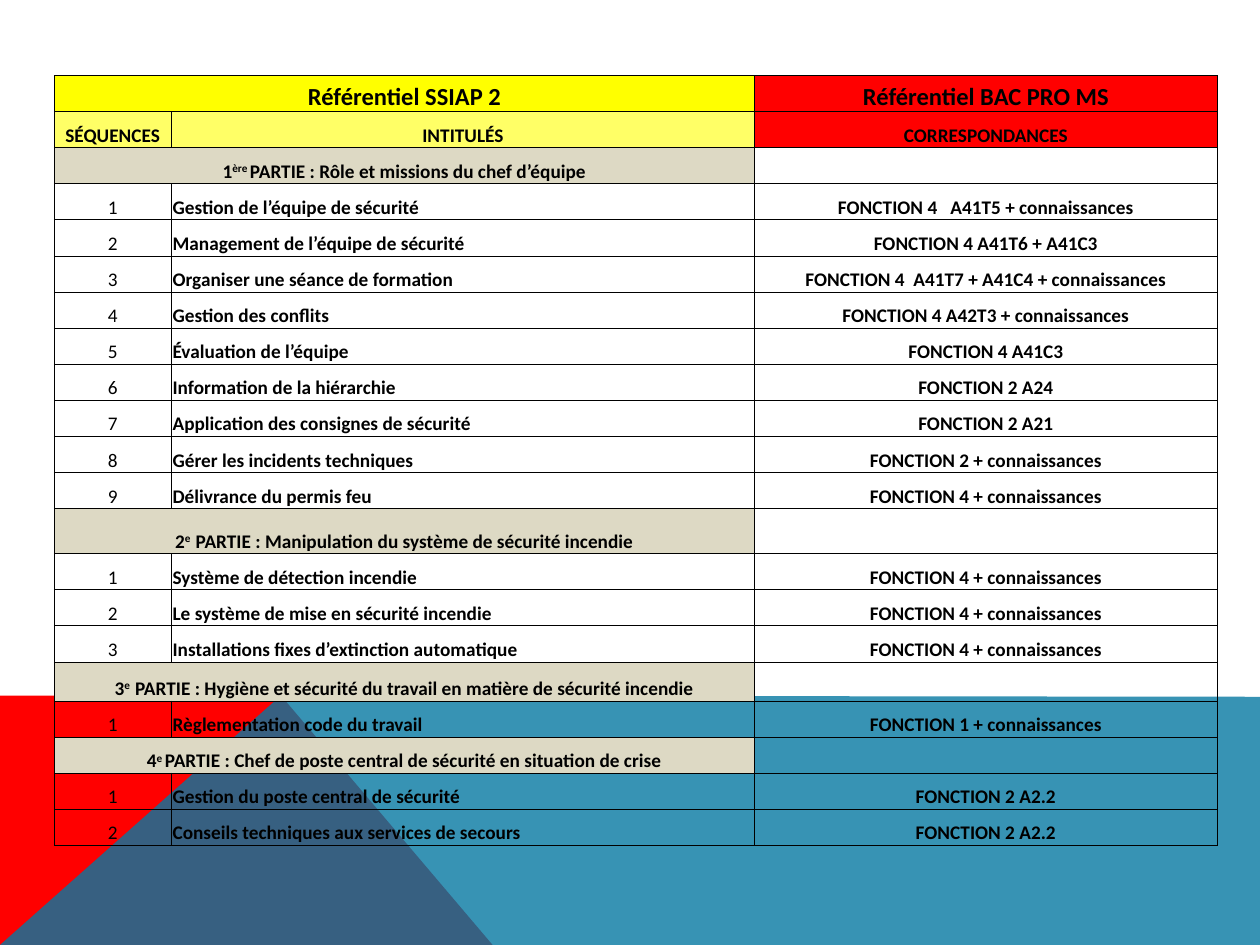
from lxml.etree import SubElement
from pptx import Presentation
from pptx.dml.color import RGBColor
from pptx.enum.text import MSO_ANCHOR, PP_ALIGN
from pptx.oxml.ns import qn
from pptx.util import Inches, Pt

BLACK = RGBColor(0x00, 0x00, 0x00)
RED = RGBColor(0xFF, 0x00, 0x00)
BLUE = RGBColor(0x05, 0x78, 0xA2)
YELLOW = RGBColor(0xFF, 0xFF, 0x00)
PALE_YELLOW = RGBColor(0xFF, 0xFF, 0x66)
BEIGE = RGBColor(0xDD, 0xD9, 0xC4)
FONT = "Calibri"

# Each part: number, ordinal ending, title, row height (None = regular), sequences
PARTS = [
    ("1", "ère ", "PARTIE : Rôle et missions du chef d’équipe", None, [
        ("Gestion de l’équipe de sécurité", "FONCTION 4   A41T5 + connaissances"),
        ("Management de l’équipe de sécurité", "FONCTION 4 A41T6 + A41C3"),
        ("Organiser une séance de formation", "FONCTION 4  A41T7 + A41C4 + connaissances"),
        ("Gestion des conflits", "FONCTION 4 A42T3 + connaissances"),
        ("Évaluation de l’équipe", "FONCTION 4 A41C3"),
        ("Information de la hiérarchie", "FONCTION 2 A24"),
        ("Application des consignes de sécurité", "FONCTION 2 A21"),
        ("Gérer les incidents techniques", "FONCTION 2 + connaissances"),
        ("Délivrance du permis feu", "FONCTION 4 + connaissances"),
    ]),
    ("2", "e  ", "PARTIE : Manipulation du système de sécurité incendie", 0.36, [
        ("Système de détection incendie", "FONCTION 4 + connaissances"),
        ("Le système de mise en sécurité incendie", "FONCTION 4 + connaissances"),
        ("Installations fixes d’extinction automatique", "FONCTION 4 + connaissances"),
    ]),
    ("3", "e  ", "PARTIE : Hygiène et sécurité du travail en matière de sécurité incendie", 0.31, [
        ("Règlementation code du travail", "FONCTION 1 + connaissances"),
    ]),
    ("4", "e ", "PARTIE : Chef de poste central de sécurité en situation de crise", None, [
        ("Gestion du poste central de sécurité", "FONCTION 2 A2.2"),
        ("Conseils techniques aux services de secours", "FONCTION 2 A2.2"),
    ]),
]


def add_text(cell, text, size=11, bold=True, align=PP_ALIGN.CENTER, raised=False):
    paragraph = cell.text_frame.paragraphs[0]
    paragraph.alignment = align
    run = paragraph.add_run()
    run.text = text
    run.font.name = FONT
    run.font.size = Pt(size)
    run.font.bold = bold
    run.font.color.rgb = BLACK
    if raised:
        run.font._element.set("baseline", "30000")


def format_cell(cell):
    cell.margin_left = cell.margin_right = cell.margin_top = Inches(0.01)
    cell.margin_bottom = 0
    cell.vertical_anchor = MSO_ANCHOR.BOTTOM
    properties = cell._tc.get_or_add_tcPr()
    for side in ("a:lnL", "a:lnR", "a:lnT", "a:lnB"):
        line = SubElement(properties, qn(side), w=str(Pt(0.5)))
        solid = SubElement(line, qn("a:solidFill"))
        SubElement(solid, qn("a:srgbClr"), val=str(BLACK))
    cell.fill.background()


presentation = Presentation()
presentation.slide_width = Inches(10)
presentation.slide_height = Inches(7.5)
slide = presentation.slides.add_slide(presentation.slide_layouts[6])

# Background: red wedge under a translucent blue band
backdrops = [
    ([(0, 7.5), (0, 5.52), (2.23, 5.52), (3.91, 7.5)], RED, None),
    ([(0, 7.5), (2.23, 5.52), (10, 5.53), (10, 7.5)], BLUE, 80),
]
for corners, color, opacity in backdrops:
    points = [(Inches(x), Inches(y)) for x, y in corners]
    builder = slide.shapes.build_freeform(*points[0])
    builder.add_line_segments(points[1:], close=True)
    shape = builder.convert_to_shape()
    shape.shadow.inherit = False
    shape.fill.solid()
    shape.fill.fore_color.rgb = color
    shape.line.fill.background()
    if opacity:
        color_element = shape._element.spPr.find(qn("a:solidFill"))[0]
        SubElement(color_element, qn("a:alpha"), val=str(opacity * 1000))

# Table grid: regular rows share the height the taller ones leave
special_heights = [part[3] for part in PARTS if part[3]]
row_count = 2 + sum(1 + len(part[4]) for part in PARTS)
table_height = 6.11
regular_height = (table_height - sum(special_heights)) / (row_count - len(special_heights))
table = slide.shapes.add_table(
    row_count, 3, Inches(0.43), Inches(0.6), Inches(9.23), Inches(table_height)
).table
table.first_row = False
table.horz_banding = False
for column, width in zip(table.columns, (0.93, 4.63, 3.67)):
    column.width = Inches(width)
for row in table.rows:
    row.height = Inches(regular_height)
    for cell in row.cells:
        format_cell(cell)

# Two header rows
table.cell(0, 0).merge(table.cell(0, 1))
headers = [
    (0, 0, "Référentiel SSIAP 2", 14, YELLOW),
    (0, 2, "Référentiel BAC PRO MS", 14, RED),
    (1, 0, "SÉQUENCES", 11, PALE_YELLOW),
    (1, 1, "INTITULÉS", 11, PALE_YELLOW),
    (1, 2, "CORRESPONDANCES", 11, RED),
]
for row_index, column_index, text, size, color in headers:
    cell = table.cell(row_index, column_index)
    add_text(cell, text, size=size)
    cell.fill.solid()
    cell.fill.fore_color.rgb = color

# Parts and their numbered sequences
row_index = 2
for number, ending, title, height, sequences in PARTS:
    cell = table.cell(row_index, 0)
    cell.merge(table.cell(row_index, 1))
    add_text(cell, number)
    add_text(cell, ending, raised=True)
    add_text(cell, title)
    cell.fill.solid()
    cell.fill.fore_color.rgb = BEIGE
    if height:
        table.rows[row_index].height = Inches(height)
    # Small end mark keeps the empty cell from stretching its row
    empty_paragraph = table.cell(row_index, 2).text_frame.paragraphs[0]
    SubElement(empty_paragraph._p, qn("a:endParaRPr"), sz="1100")
    row_index += 1
    for position, (heading, match) in enumerate(sequences, start=1):
        add_text(table.cell(row_index, 0), str(position), bold=False)
        add_text(table.cell(row_index, 1), heading, align=PP_ALIGN.LEFT)
        add_text(table.cell(row_index, 2), match)
        row_index += 1

presentation.save("out.pptx")
